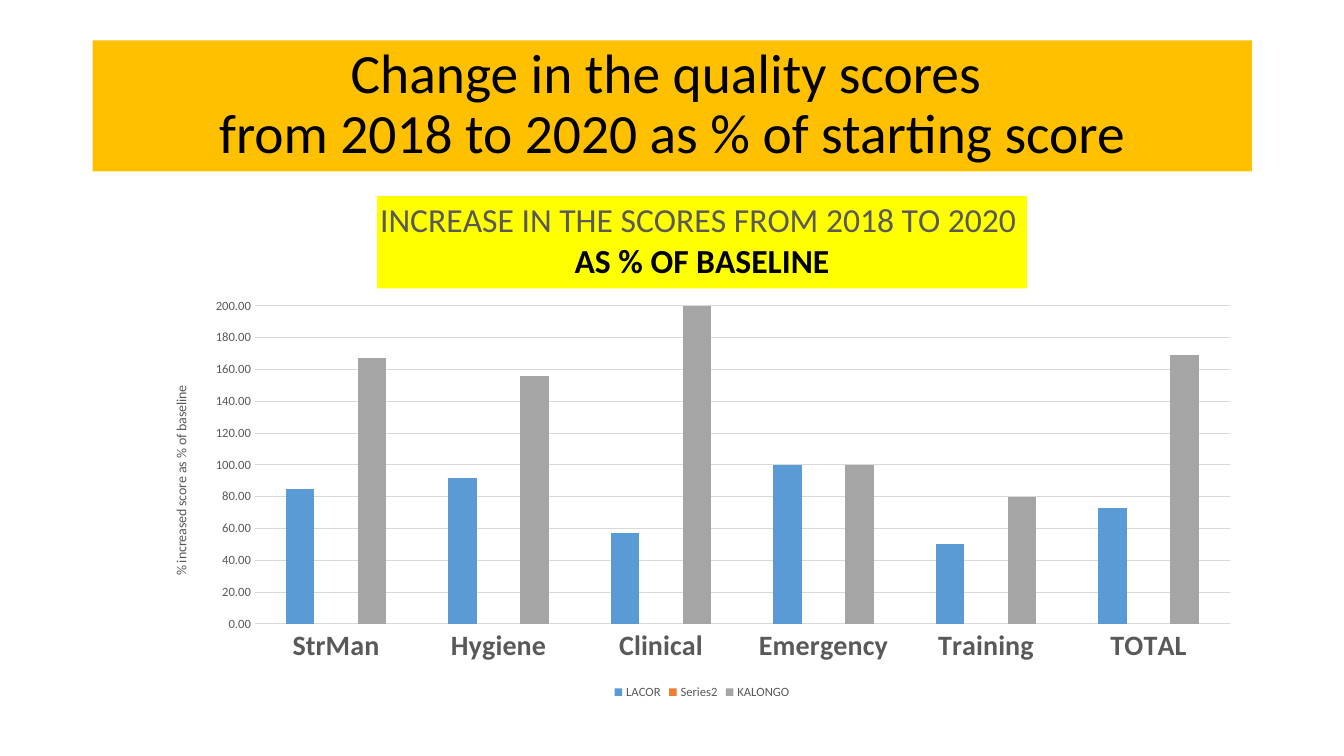
from lxml import etree
from pptx import Presentation
from pptx.chart.data import CategoryChartData
from pptx.dml.color import RGBColor
from pptx.enum.chart import XL_CHART_TYPE, XL_LEGEND_POSITION, XL_TICK_MARK
from pptx.enum.text import MSO_ANCHOR, MSO_AUTO_SIZE, PP_ALIGN
from pptx.oxml.ns import qn
from pptx.util import Pt

CLUSTERED = XL_CHART_TYPE.COLUMN_CLUSTERED
LEGEND_BOTTOM = XL_LEGEND_POSITION.BOTTOM
NO_TICK = XL_TICK_MARK.NONE
MIDDLE = MSO_ANCHOR.MIDDLE
NO_AUTOFIT = MSO_AUTO_SIZE.NONE
CENTER = PP_ALIGN.CENTER

FONT = "Calibri"
BLACK, GRAY, GRID = "000000", "595959", "D9D9D9"
AMBER, YELLOW = "FFC000", "FFFF00"

TITLE_LINES = ["Change in the quality scores ", "from 2018 to 2020 as % of starting score"]
CHART_TITLE = [
    ("INCREASE IN THE SCORES FROM 2018 TO 2020 ", GRAY, False),
    ("AS % OF BASELINE", BLACK, True),
]
AXIS_TITLE = "% increased score as % of baseline"
CATEGORIES = ["StrMan", "Hygiene", "Clinical", "Emergency", "Training", "TOTAL"]
SERIES = [
    ("LACOR", [85, 92, 57, 100, 50, 73], "5B9BD5"),
    ("Series2", [None] * len(CATEGORIES), "ED7D31"),
    ("KALONGO", [167, 156, 200, 100, 80, 169], "A5A5A5"),
]
TITLE_BOX = (66.2, 28.8, 828, 93.6)
CHART_BOX = (108.7, 128.9, 785.5, 373.7)
PLOT_BOX = (182.1, 218.6, 696.4, 227.1)


def color(value):
    return RGBColor.from_string(value)


def set_font(font, size, value, bold=False):
    font.name = FONT
    font.size = Pt(size)
    font.bold = bold
    font.color.rgb = color(value)


def set_line(line, value):
    line.color.rgb = color(value)
    line.width = Pt(0.75)


def add_title(slide):
    title = slide.shapes.title
    title.left, title.top, title.width, title.height = map(Pt, TITLE_BOX)
    title.fill.solid()
    title.fill.fore_color.rgb = color(AMBER)
    frame = title.text_frame
    frame.auto_size = NO_AUTOFIT
    frame.word_wrap = True
    frame.vertical_anchor = MIDDLE
    paragraph = frame.paragraphs[0]
    paragraph.alignment = CENTER
    paragraph.line_spacing = 0.9
    for index, text in enumerate(TITLE_LINES):
        if index:
            paragraph.add_line_break()
        run = paragraph.add_run()
        run.text = text
        set_font(run.font, 39.6, BLACK)


def place_plot(chart):
    plot_area = chart.element.find(".//" + qn("c:plotArea"))
    for old_layout in plot_area.findall(qn("c:layout")):
        plot_area.remove(old_layout)
    layout = etree.Element(qn("c:layout"))
    manual = etree.SubElement(layout, qn("c:manualLayout"))
    left, top, width, height = CHART_BOX
    settings = [
        ("layoutTarget", "inner"), ("xMode", "edge"), ("yMode", "edge"),
        ("x", (PLOT_BOX[0] - left) / width), ("y", (PLOT_BOX[1] - top) / height),
        ("w", PLOT_BOX[2] / width), ("h", PLOT_BOX[3] / height),
    ]
    for name, value in settings:
        etree.SubElement(manual, qn("c:" + name)).set("val", str(value))
    plot_area.insert(0, layout)


def format_titles(chart):
    chart.has_title = True
    title = chart.chart_title
    title.include_in_layout = False
    title.format.fill.solid()
    title.format.fill.fore_color.rgb = color(YELLOW)
    frame = title.text_frame
    for index, (text, value, bold) in enumerate(CHART_TITLE):
        paragraph = frame.add_paragraph() if index else frame.paragraphs[0]
        paragraph.alignment = CENTER
        run = paragraph.add_run()
        run.text = text
        set_font(run.font, 24, value, bold)
    run = chart.value_axis.axis_title.text_frame.paragraphs[0].add_run()
    run.text = AXIS_TITLE
    set_font(run.font, 10, GRAY)


def format_axes(chart):
    category_axis, value_axis = chart.category_axis, chart.value_axis
    for axis in (category_axis, value_axis):
        axis.major_tick_mark = NO_TICK
        axis.minor_tick_mark = NO_TICK
    set_font(category_axis.tick_labels.font, 20, GRAY, True)
    set_line(category_axis.format.line, GRID)
    set_font(value_axis.tick_labels.font, 9, GRAY)
    value_axis.format.line.fill.background()
    value_axis.minimum_scale = 0
    value_axis.maximum_scale = 200
    value_axis.major_unit = 20
    value_axis.tick_labels.number_format = "0.00"
    value_axis.tick_labels.number_format_is_linked = False
    value_axis.has_major_gridlines = True
    set_line(value_axis.major_gridlines.format.line, GRID)


def add_score_chart(slide):
    data = CategoryChartData()
    data.categories = CATEGORIES
    for name, values, _ in SERIES:
        data.add_series(name, values)
    chart = slide.shapes.add_chart(CLUSTERED, *map(Pt, CHART_BOX), data).chart
    set_font(chart.font, 10, BLACK)
    plot = chart.plots[0]
    plot.gap_width = 219
    plot.overlap = -27
    plot.vary_by_categories = False
    for series, (_, _, value) in zip(plot.series, SERIES):
        series.format.fill.solid()
        series.format.fill.fore_color.rgb = color(value)
    format_axes(chart)
    format_titles(chart)
    chart.has_legend = True
    chart.legend.position = LEGEND_BOTTOM
    chart.legend.include_in_layout = False
    set_font(chart.legend.font, 9, GRAY)
    place_plot(chart)


def main():
    presentation = Presentation()
    presentation.slide_width = Pt(960)
    presentation.slide_height = Pt(540)
    slide = presentation.slides.add_slide(presentation.slide_layouts.get_by_name("Title Only"))
    add_title(slide)
    add_score_chart(slide)
    presentation.save("out.pptx")


if __name__ == "__main__":
    main()
